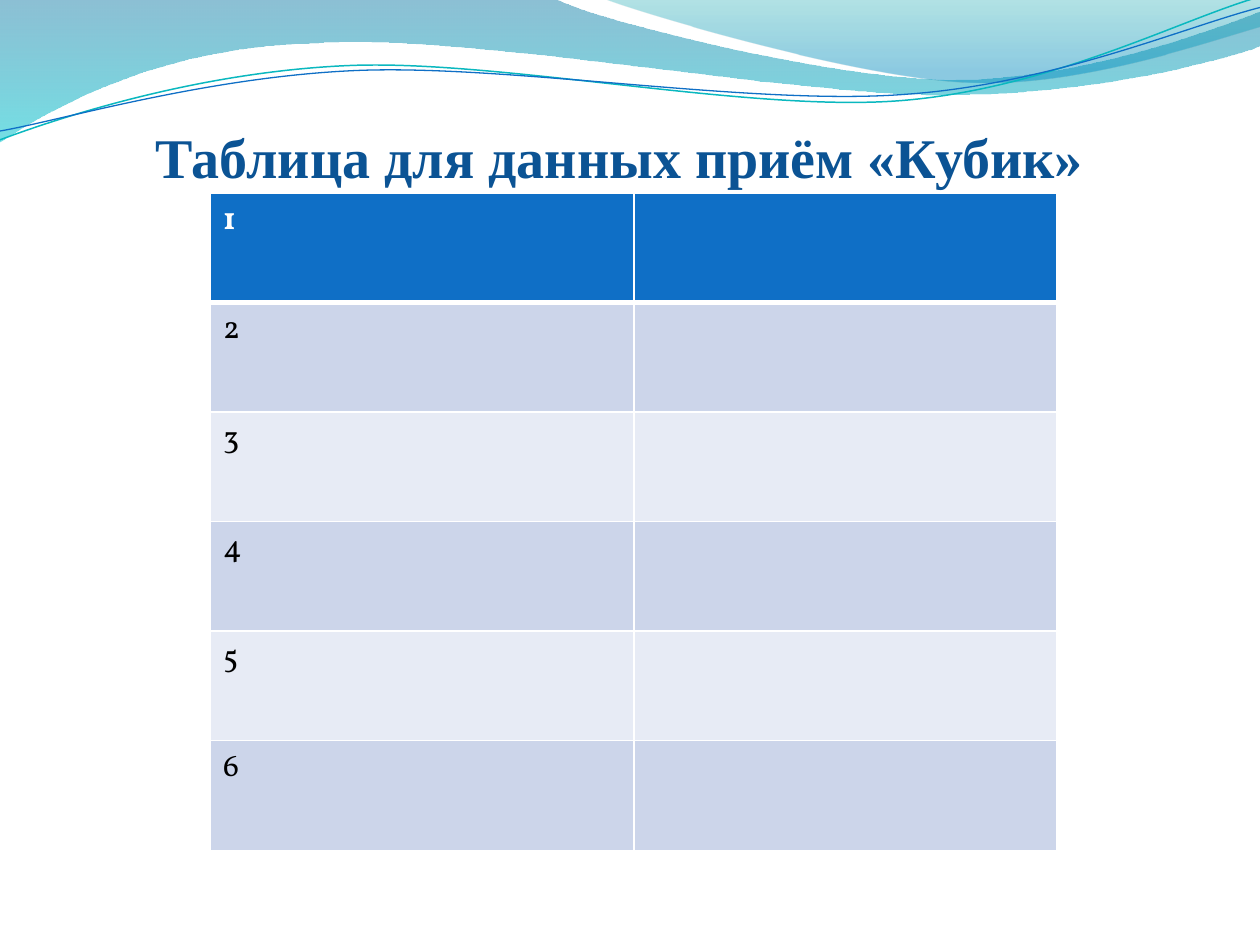
from dataclasses import dataclass
from math import cos, radians, sin
from typing import Optional

from lxml.etree import SubElement
from pptx import Presentation
from pptx.dml.color import RGBColor
from pptx.enum.text import MSO_AUTO_SIZE, PP_ALIGN
from pptx.oxml.ns import qn
from pptx.util import Emu, Inches, Pt

WHITE = RGBColor(0xFF, 0xFF, 0xFF)
BLACK = RGBColor(0x00, 0x00, 0x00)
BLUE = RGBColor(0x0F, 0x6F, 0xC6)
TEAL = RGBColor(0x0A, 0xB8, 0xBF)
TITLE_BLUE = RGBColor(0x0B, 0x53, 0x94)
BAND_DARK = RGBColor(0xCC, 0xD5, 0xEA)
BAND_LIGHT = RGBColor(0xE7, 0xEB, 0xF5)
SEA_BLUE = RGBColor(0x00, 0x74, 0xA1)
CYAN = RGBColor(0x00, 0xC6, 0xCF)
SEA_GREEN = RGBColor(0x00, 0xA1, 0xA9)
SKY_BLUE = RGBColor(0x00, 0x8B, 0xBF)

WIDTH, HEIGHT = Inches(10), Inches(7.5)
ROWS, COLUMNS = 6, 2
TILT = 2.7  # degrees by which the wave lines lean to the left

Point = tuple[float, float]


@dataclass(frozen=True)
class Stop:
    position: float
    color: RGBColor
    opacity: int  # percent


@dataclass(frozen=True)
class Wave:
    """Segments hold one point (a line) or three points (a cubic curve)."""
    start: Point
    segments: list[list[Point]]
    stops: Optional[tuple[Stop, Stop]] = None
    line_color: Optional[RGBColor] = None
    line_width: float = 0
    pivot: Optional[Point] = None


WAVES = [
    Wave((0, 0), [
        [(4.4, -0.01)],
        [(4.76, 0.17), (6.64, 0.63), (7.58, 0.63)],
        [(8.53, 0.63), (9.58, 0.26), (10, 0.09)],
        [(10.01, 0.36)],
        [(9.83, 0.44), (8.7, 0.76), (7.46, 0.75)],
        [(6.22, 0.75), (3.82, 0.28), (2.57, 0.34)],
        [(1.29, 0.36), (0.46, 0.83), (-0.01, 1.13)],
    ], stops=(Stop(0, SEA_BLUE, 45), Stop(1, CYAN, 55))),
    Wave((4.79, -0.01), [
        [(5.09, 0.11), (6.82, 0.62), (7.69, 0.65)],
        [(8.56, 0.69), (9.61, 0.32), (10, 0.21)],
        [(10, 0)],
    ], stops=(Stop(0, SEA_GREEN, 30), Stop(0.8, SKY_BLUE, 45))),
    Wave((0, 1.11), [
        [(0.48, 0.93), (1.58, 0.57), (2.77, 0.52)],
        [(3.95, 0.47), (5.93, 0.89), (7.13, 0.8)],
        [(8.33, 0.71), (9.38, 0.15), (9.98, -0.02)],
    ], line_color=TEAL, line_width=0.85, pivot=(4.99, 0.57)),
    Wave((0, 1.04), [
        [(0.47, 0.96), (1.64, 0.61), (2.83, 0.56)],
        [(4.03, 0.51), (5.97, 0.84), (7.17, 0.75)],
        [(8.36, 0.67), (9.41, 0.21), (10, 0.06)],
    ], line_color=BLUE, line_width=0.75, pivot=(5, 0.59)),
]


def level(point: Point, pivot: Point) -> Point:
    """Turn a point about the pivot to undo the tilt."""
    x, y = point[0] - pivot[0], point[1] - pivot[1]
    cosine, sine = cos(radians(TILT)), sin(radians(TILT))
    return pivot[0] + x * cosine - y * sine, pivot[1] + x * sine + y * cosine


def bend_segments(shape, segments: list[list[Point]]) -> None:
    """Join each run of three straight steps into one cubic curve."""
    steps = iter(list(shape._element.iter(qn("a:lnTo"))))
    for segment in segments:
        group = [next(steps) for _ in segment]
        if len(group) == 3:
            curve = group[0].makeelement(qn("a:cubicBezTo"))
            group[0].addprevious(curve)
            for step in group:
                curve.append(step[0])
                step.getparent().remove(step)


def draw_wave(slide, wave: Wave) -> None:
    points = [wave.start] + [point for segment in wave.segments for point in segment]
    if wave.pivot:
        points = [level(point, wave.pivot) for point in points]
    points = [(Inches(x), Inches(y)) for x, y in points]
    builder = slide.shapes.build_freeform(*points[0])
    builder.add_line_segments(points[1:], close=wave.stops is not None)
    shape = builder.convert_to_shape()
    bend_segments(shape, wave.segments)
    shape.shadow.inherit = False
    if wave.pivot:
        shape.rotation = 360 - TILT
    if wave.stops:
        shape.line.fill.background()
        shape.fill.gradient()
        shape.fill.gradient_angle = 270
        elements = shape._element.iter(qn("a:gs"))
        for stop, target, element in zip(wave.stops, shape.fill.gradient_stops, elements):
            target.position = stop.position
            target.color.rgb = stop.color
            SubElement(element[0], qn("a:alpha"), val=str(stop.opacity * 1000))
    else:
        shape.fill.background()
        shape.line.color.rgb = wave.line_color
        shape.line.width = Pt(wave.line_width)


def format_font(font, color: RGBColor, values: dict) -> None:
    for name, value in values.items():
        setattr(font, name, value)
    font.color.rgb = color


def set_borders(cell, widths: dict[str, float]) -> None:
    properties = cell._tc.get_or_add_tcPr()
    for index, (side, width) in enumerate(widths.items()):
        line = SubElement(properties, qn(f"a:ln{side}"), w=str(Pt(width)))
        fill = SubElement(line, qn("a:solidFill"))
        SubElement(fill, qn("a:srgbClr"), val=str(WHITE))
        properties.insert(index, line)  # borders come before the fill


def draw_table(slide) -> None:
    frame = slide.shapes.add_table(ROWS, COLUMNS, Inches(1.67), Inches(1.53),
                                   Inches(3.36) * COLUMNS, Inches(0.87) * ROWS)
    for row_index, row in enumerate(frame.table.rows):
        header = row_index == 0
        band = BAND_DARK if row_index % 2 else BAND_LIGHT
        for column_index, cell in enumerate(row.cells):
            cell.fill.solid()
            cell.fill.fore_color.rgb = BLUE if header else band
            set_borders(cell, {"L": 1, "R": 1, "T": 3 if row_index == 1 else 1,
                               "B": 3 if header else 1})
            if column_index == 0:
                run = cell.text_frame.paragraphs[0].add_run()
                run.text = str(row_index + 1)
                format_font(run.font, WHITE if header else BLACK,
                            {"name": "Vollkorn", "size": Pt(18), "bold": header})


def draw_title(slide) -> None:
    box = slide.shapes.add_textbox(Emu(int(WIDTH * 0.11)), Inches(0.92),
                                   Inches(7.75), Inches(0.64))
    box.text_frame.word_wrap = False
    box.text_frame.auto_size = MSO_AUTO_SIZE.SHAPE_TO_FIT_TEXT
    paragraph = box.text_frame.paragraphs[0]
    paragraph.alignment = PP_ALIGN.CENTER
    run = paragraph.add_run()
    run.text = "Таблица для данных приём «Кубик» "
    format_font(run.font, TITLE_BLUE,
                {"name": "Times New Roman", "size": Pt(32), "bold": True})


def main() -> None:
    presentation = Presentation()
    presentation.slide_width, presentation.slide_height = WIDTH, HEIGHT
    slide = presentation.slides.add_slide(presentation.slide_layouts[6])
    # Waves along the top edge
    for wave in WAVES:
        draw_wave(slide, wave)
    # Numbered table and its title
    draw_table(slide)
    draw_title(slide)
    presentation.save("out.pptx")


if __name__ == "__main__":
    main()
